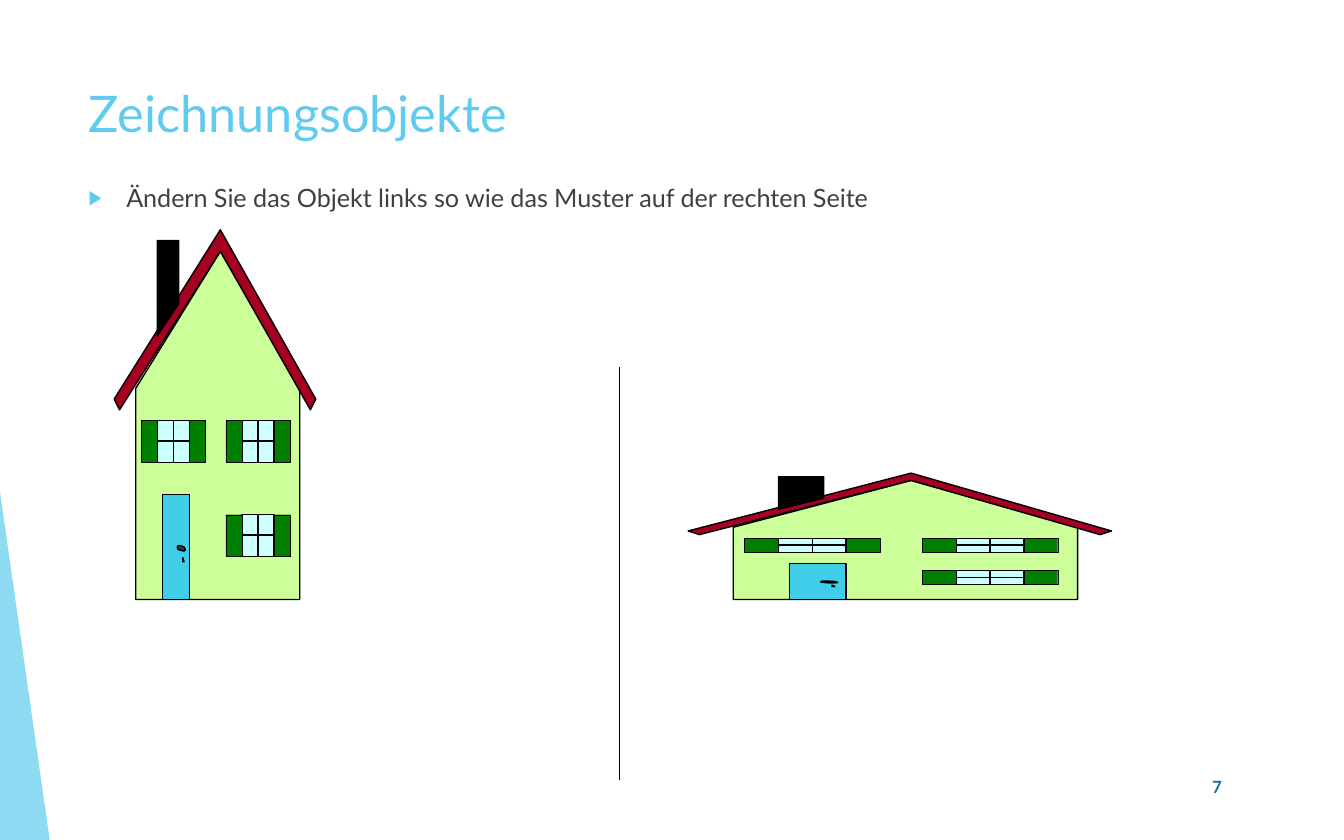
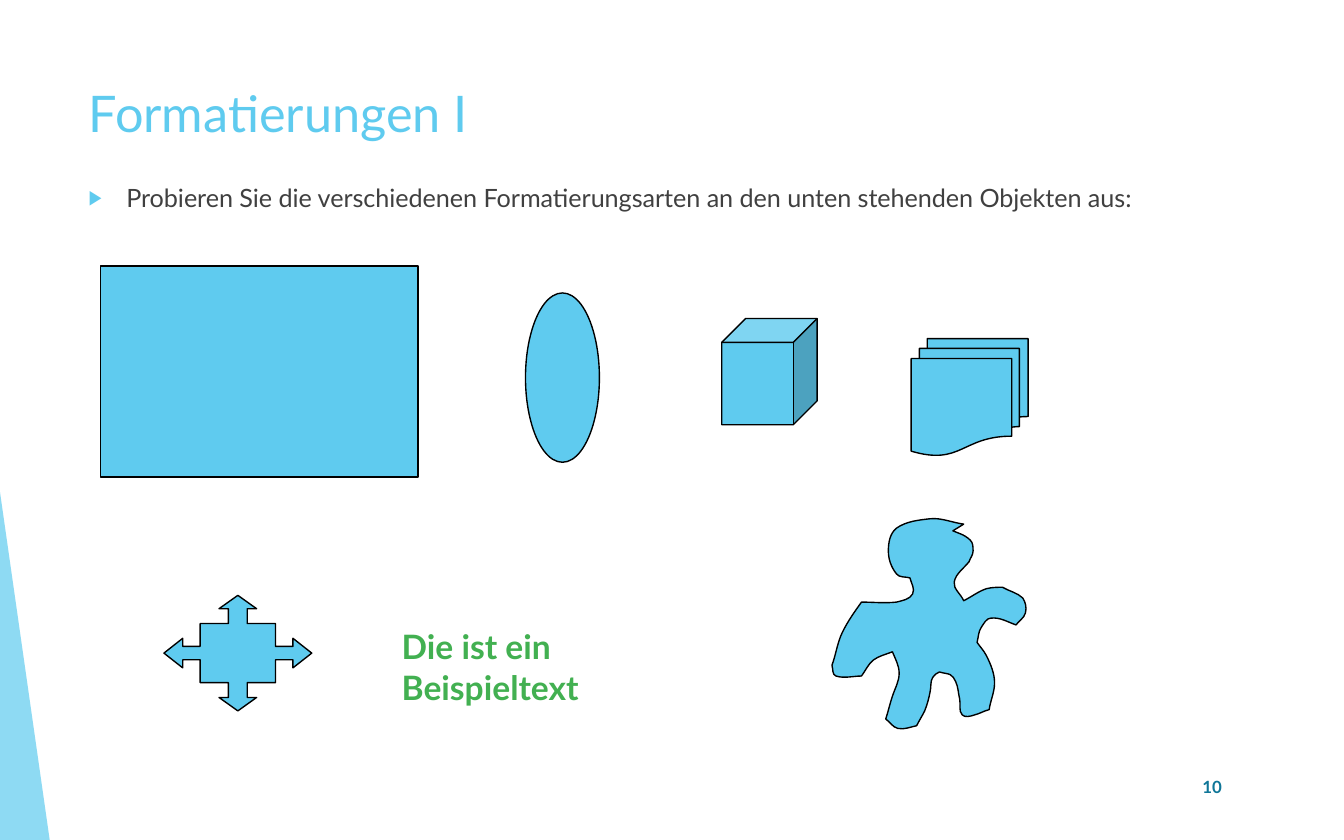
from math import dist
from typing import NamedTuple

from lxml.etree import SubElement
from pptx import Presentation
from pptx.dml.color import RGBColor
from pptx.enum.shapes import MSO_CONNECTOR, MSO_SHAPE
from pptx.enum.text import MSO_ANCHOR as Anchor
from pptx.enum.text import MSO_AUTO_SIZE as AutoSize
from pptx.enum.text import PP_ALIGN as Align
from pptx.oxml.ns import qn
from pptx.shapes.autoshape import Shape
from pptx.shapes.group import GroupShape
from pptx.shapes.shapetree import GroupShapes, SlideShapes
from pptx.slide import Slide, SlideLayout
from pptx.text.text import TextFrame
from pptx.util import Pt

Shapes = SlideShapes | GroupShapes
Point = tuple[int, int]
Points = list[Point]

# Shared look: 100 px to the inch
EMU_PER_PX = 9144
FONT = "Lato"
SKY, BLACK, BODY_GREY, NUMBER_BLUE = "5FCBEF", "000000", "404040", "0F7698"
WALL, ROOF, DOOR, FITTING = "CCFF99", "A50021", "3FCDE7", "2C3C43"
GLASS, SHUTTER, SAMPLE_GREEN = "CCFFFF", "008000", "42B051"


class Box(NamedTuple):
    left: int
    top: int
    width: int
    height: int


class TextStyle(NamedTuple):
    size: float
    color: str
    bold: bool = False
    align: Align = Align.LEFT
    anchor: Anchor = Anchor.TOP


class Preset(NamedTuple):
    kind: MSO_SHAPE
    box: Box


SLIDE_WIDTH, SLIDE_HEIGHT = 1000, 625
TITLE_BOX = Box(56, 56, 862, 60)
BODY_BOX = Box(56, 131, 862, 419)
NUMBER_BOX = Box(863, 569, 56, 33)
BAND = Preset(MSO_SHAPE.ISOSCELES_TRIANGLE, Box(0, 366, 37, 259))
BULLET_INDENT = 28

TITLE_STYLE = TextStyle(27, SKY)
BODY_STYLE = TextStyle(13.5, BODY_GREY)
NUMBER_STYLE = TextStyle(9, NUMBER_BLUE, True, Align.RIGHT, Anchor.MIDDLE)
SAMPLE_STYLE = TextStyle(18, SAMPLE_GREEN, True)


# Basic helpers
def px(length: int) -> int:
    return length * EMU_PER_PX


def emu(box: Box) -> list[int]:
    return [px(length) for length in box]


def rgb(color: str) -> RGBColor:
    return RGBColor.from_string(color)


def place(shape: Shape | GroupShape, box: Box) -> None:
    shape.left, shape.top, shape.width, shape.height = emu(box)


def paint(shape: Shape, fill: str, line_width: float) -> None:
    shape.shadow.inherit = False
    shape.fill.solid()
    shape.fill.fore_color.rgb = rgb(fill)
    if line_width:
        shape.line.color.rgb = rgb(BLACK)
        shape.line.width = Pt(line_width)
    else:
        shape.line.fill.background()


def add_preset(shapes: Shapes, preset: Preset, fill: str, line_width: float = 0.75) -> Shape:
    shape = shapes.add_shape(preset.kind, *emu(preset.box))
    paint(shape, fill, line_width)
    return shape


def add_line(shapes: Shapes, start: Point, end: Point) -> None:
    ends = [px(length) for length in (*start, *end)]
    connector = shapes.add_connector(MSO_CONNECTOR.STRAIGHT, *ends)
    connector.line.color.rgb = rgb(BLACK)
    connector.line.width = Pt(0.75)
    SubElement(connector.element.spPr, qn("a:effectLst"))


def add_outline(shapes: Shapes, points: Points, fill: str) -> Shape:
    builder = shapes.build_freeform(*points[0], scale=EMU_PER_PX)
    builder.add_line_segments(points[1:], close=True)
    shape = builder.convert_to_shape()
    paint(shape, fill, 0.75)
    return shape


# Smooth outlines: strokes are rounded inside and meet in corners
def control_point(stroke: Points, index: int, reach: float) -> Point:
    """Step from a stroke point in parallel to the line between its neighbours."""
    before, after = stroke[max(index - 1, 0)], stroke[min(index + 1, len(stroke) - 1)]
    share = reach / dist(before, after)
    x, y = stroke[index]
    return round(x + share * (after[0] - before[0])), round(y + share * (after[1] - before[1]))


def bezier_points(strokes: list[Points]) -> Points:
    """Each stroke starts where the one before it ends; the first closes the ring."""
    points = [strokes[-1][-1]]
    for ends in strokes:
        stroke = [points[-1], *ends]
        for index, end in enumerate(ends):
            reach = dist(stroke[index], end) / 3
            points += [control_point(stroke, index, reach),
                       control_point(stroke, index + 1, -reach), end]
    return points


def add_smooth_outline(shapes: Shapes, strokes: list[Points], fill: str) -> None:
    shape = add_outline(shapes, bezier_points(strokes), fill)
    segments = list(shape.element.iter(qn("a:lnTo")))
    for curve, second, end in zip(segments[::3], segments[1::3], segments[2::3]):
        curve.tag = qn("a:cubicBezTo")
        for segment in (second, end):
            curve.append(segment[0])
            segment.getparent().remove(segment)


# Text
def write(text_frame: TextFrame, text: str, style: TextStyle) -> None:
    text_frame.text = text
    text_frame.word_wrap = True
    text_frame.auto_size = AutoSize.NONE
    text_frame.vertical_anchor = style.anchor
    paragraph = text_frame.paragraphs[0]
    paragraph.alignment = style.align
    font = paragraph.runs[0].font
    font.name, font.size, font.bold = FONT, Pt(style.size), style.bold
    font.color.rgb = rgb(style.color)


def add_text(slide: Slide, box: Box, text: str, style: TextStyle) -> None:
    write(slide.shapes.add_textbox(*emu(box)).text_frame, text, style)


def set_bullet(text_frame: TextFrame) -> None:
    paragraph = text_frame.paragraphs[0]
    paragraph.space_before = Pt(7.5)
    properties = paragraph._p.get_or_add_pPr()
    properties.set("marL", str(px(BULLET_INDENT)))
    properties.set("indent", str(-px(BULLET_INDENT)))
    color = SubElement(properties, qn("a:buClr"))
    SubElement(color, qn("a:srgbClr"), val=SKY)
    SubElement(properties, qn("a:buSzPct"), val="80000")
    SubElement(properties, qn("a:buChar"), char="▶")


# Slide frame
def add_slide(presentation: Presentation, title: str, task: str, number: int) -> Slide:
    slide = presentation.slides.add_slide(presentation.slide_layouts[1])
    heading, body = slide.shapes.title, slide.placeholders[1]
    place(heading, TITLE_BOX)
    write(heading.text_frame, title, TITLE_STYLE)
    place(body, BODY_BOX)
    write(body.text_frame, task, BODY_STYLE)
    set_bullet(body.text_frame)
    add_text(slide, NUMBER_BOX, str(number), NUMBER_STYLE)
    return slide


def move_band_to_layout(slide: Slide, layout: SlideLayout) -> None:
    band = add_preset(slide.shapes, BAND, SKY, 0)
    band.adjustments[0] = 0
    color = next(band.element.iter(qn("a:srgbClr")))
    SubElement(color, qn("a:alpha"), val="70000")
    layout.shapes.element.append(band.element)


# House, drawn at the size of the tall one and stretched to its frame
TALL_HOUSE = Box(85, 171, 150, 275)
FLAT_HOUSE = Box(512, 352, 315, 94)
DIVIDER_TOP, DIVIDER_BOTTOM = (461, 273), (461, 580)
HOUSE_OUTLINES = [
    (WALL, [(101, 289), (101, 446), (223, 446), (223, 289), (164, 187)]),
    (ROOF, [(89, 305), (164, 187), (231, 305), (235, 297), (164, 171), (85, 297)]),
    (BLACK, [(117, 250), (117, 179), (133, 179), (133, 226)]),  # chimney
]
DOOR_PANEL = Preset(MSO_SHAPE.RECTANGLE, Box(121, 368, 20, 78))
HANDLE = [[(134, 406), (132, 407), (133, 409), (136, 410), (138, 409), (137, 407)]]
KEYHOLE = [[(136, 418), (137, 418), (136, 415)]]
WINDOW_CORNERS = [(105, 313), (168, 313), (168, 383)]
PANE_WIDTH, PANE_HEIGHT = 12, 31
PANES = [(1, GLASS, 0.75), (2, GLASS, 0.75), (0, SHUTTER, 0.25), (3, SHUTTER, 0.25)]


def add_window(shapes: Shapes, left: int, top: int) -> None:
    for column, fill, line_width in PANES:
        pane = Box(left + column * PANE_WIDTH, top, PANE_WIDTH, PANE_HEIGHT)
        add_preset(shapes, Preset(MSO_SHAPE.RECTANGLE, pane), fill, line_width)
    middle = top + PANE_HEIGHT // 2
    add_line(shapes, (left + PANE_WIDTH, middle), (left + 3 * PANE_WIDTH, middle))


def add_house(slide: Slide, frame: Box) -> None:
    house = slide.shapes.add_group_shape()
    for fill, points in HOUSE_OUTLINES:
        add_outline(house.shapes, points, fill)
    add_preset(house.shapes, DOOR_PANEL, DOOR)
    for fitting in (HANDLE, KEYHOLE):
        add_smooth_outline(house.shapes, fitting, FITTING)
    for left, top in WINDOW_CORNERS:
        add_window(house.shapes, left, top)
    place(house, frame)


# Objects to format
PRESETS = [
    Preset(MSO_SHAPE.RECTANGLE, Box(75, 198, 236, 157)),
    Preset(MSO_SHAPE.OVAL, Box(391, 218, 55, 126)),
    Preset(MSO_SHAPE.CUBE, Box(537, 237, 71, 79)),
    Preset(MSO_SHAPE.FLOWCHART_MULTIDOCUMENT, Box(678, 252, 87, 87)),
]
SAMPLE_BOX = Box(289, 461, 229, 34)
ARROW_CENTER = (177, 486)
ARROW_QUARTER = [(0, -43), (14, -33), (7, -33), (7, -22), (28, -22),
                 (28, -5), (41, -5), (41, -11), (55, 0)]
FIGURE_STROKES = {
    "head": [(692, 386), (667, 393), (661, 410), (667, 427), (677, 430)],
    "left shoulder": [(679, 442), (667, 448), (641, 448)],
    "left arm": [(627, 470), (619, 495)],
    "left hand": [(622, 503), (641, 503)],
    "left armpit": [(650, 491), (664, 485)],
    "left leg": [(669, 501), (664, 518), (659, 535)],
    "left foot": [(668, 542), (682, 540)],
    "inner left leg": [(688, 529), (692, 515), (694, 504), (699, 500)],
    "inner right leg": [(707, 502), (711, 507), (714, 520)],
    "right foot": [(716, 532), (725, 532), (736, 528)],
    "right leg": [(740, 508), (734, 488), (727, 478)],
    "right armpit": [(730, 467), (737, 460), (756, 465)],
    "right hand": [(763, 456), (761, 445), (746, 437)],
    "right arm": [(734, 438), (717, 447)],
    "neck": [(710, 433), (721, 418)],
    "face": [(724, 410), (722, 402), (714, 397), (709, 395)],
    "fringe": [(717, 390)],
}


def four_way_arrow() -> Points:
    """Mirror the top right quarter downwards, then the right half to the left."""
    right = ARROW_QUARTER + [(x, -y) for x, y in ARROW_QUARTER[-2::-1]]
    whole = right + [(-x, y) for x, y in right[-2:0:-1]]
    center_x, center_y = ARROW_CENTER
    return [(center_x + x, center_y + y) for x, y in whole]


def add_format_objects(slide: Slide) -> None:
    for preset in PRESETS:
        add_preset(slide.shapes, preset, SKY)
    add_text(slide, SAMPLE_BOX, "Die ist ein Beispieltext", SAMPLE_STYLE)
    add_outline(slide.shapes, four_way_arrow(), SKY)
    add_smooth_outline(slide.shapes, list(FIGURE_STROKES.values()), SKY)


def main() -> None:
    presentation = Presentation()
    presentation.slide_width, presentation.slide_height = px(SLIDE_WIDTH), px(SLIDE_HEIGHT)

    drawing = add_slide(presentation, "Zeichnungsobjekte",
                        "Ändern Sie das Objekt links so wie das Muster auf der rechten Seite", 7)
    move_band_to_layout(drawing, drawing.slide_layout)
    add_house(drawing, TALL_HOUSE)
    add_line(drawing.shapes, DIVIDER_TOP, DIVIDER_BOTTOM)
    add_house(drawing, FLAT_HOUSE)

    formatting = add_slide(
        presentation, "Formatierungen I",
        "Probieren Sie die verschiedenen Formatierungsarten an den unten stehenden Objekten aus:", 10)
    add_format_objects(formatting)
    presentation.save("out.pptx")


if __name__ == "__main__":
    main()
